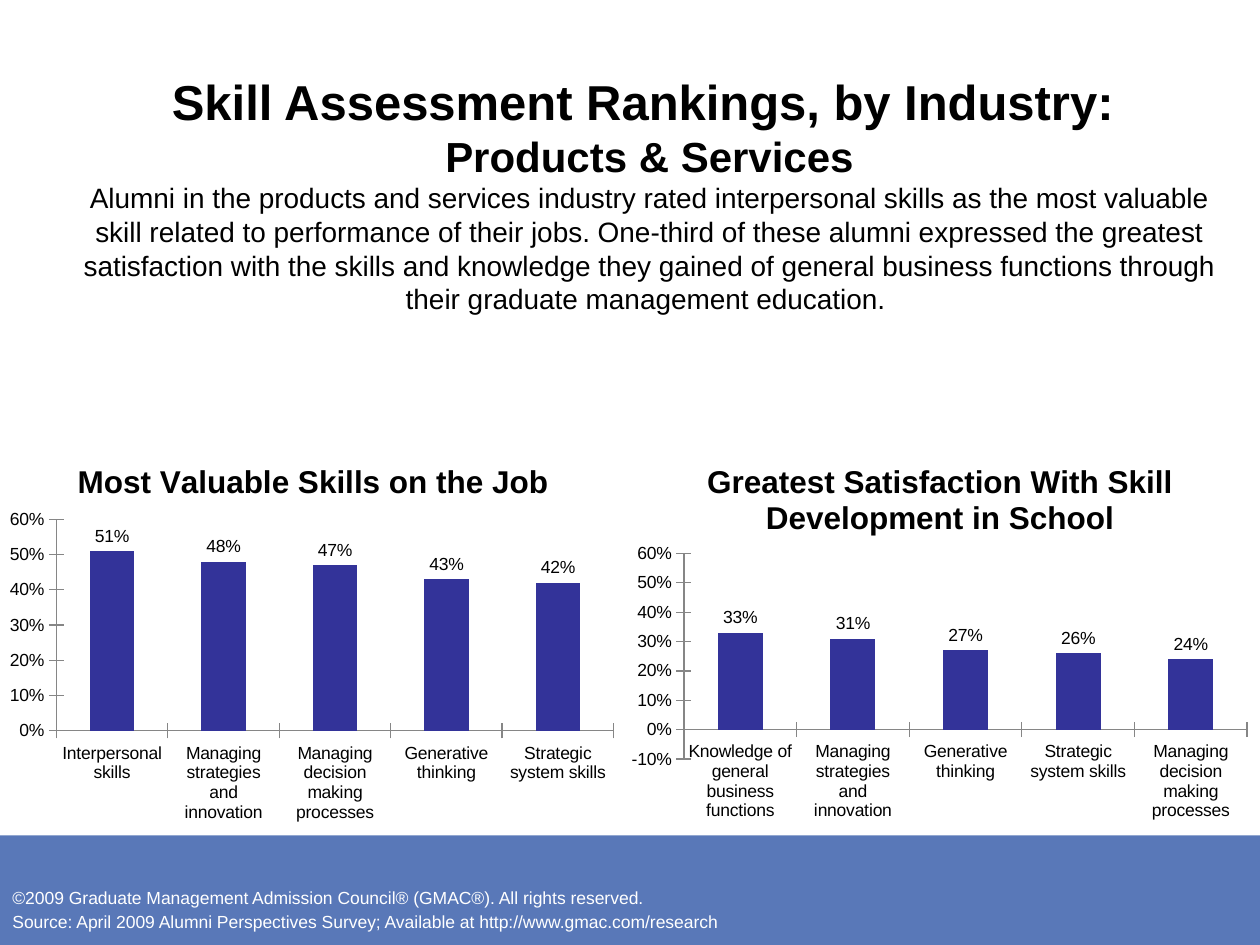
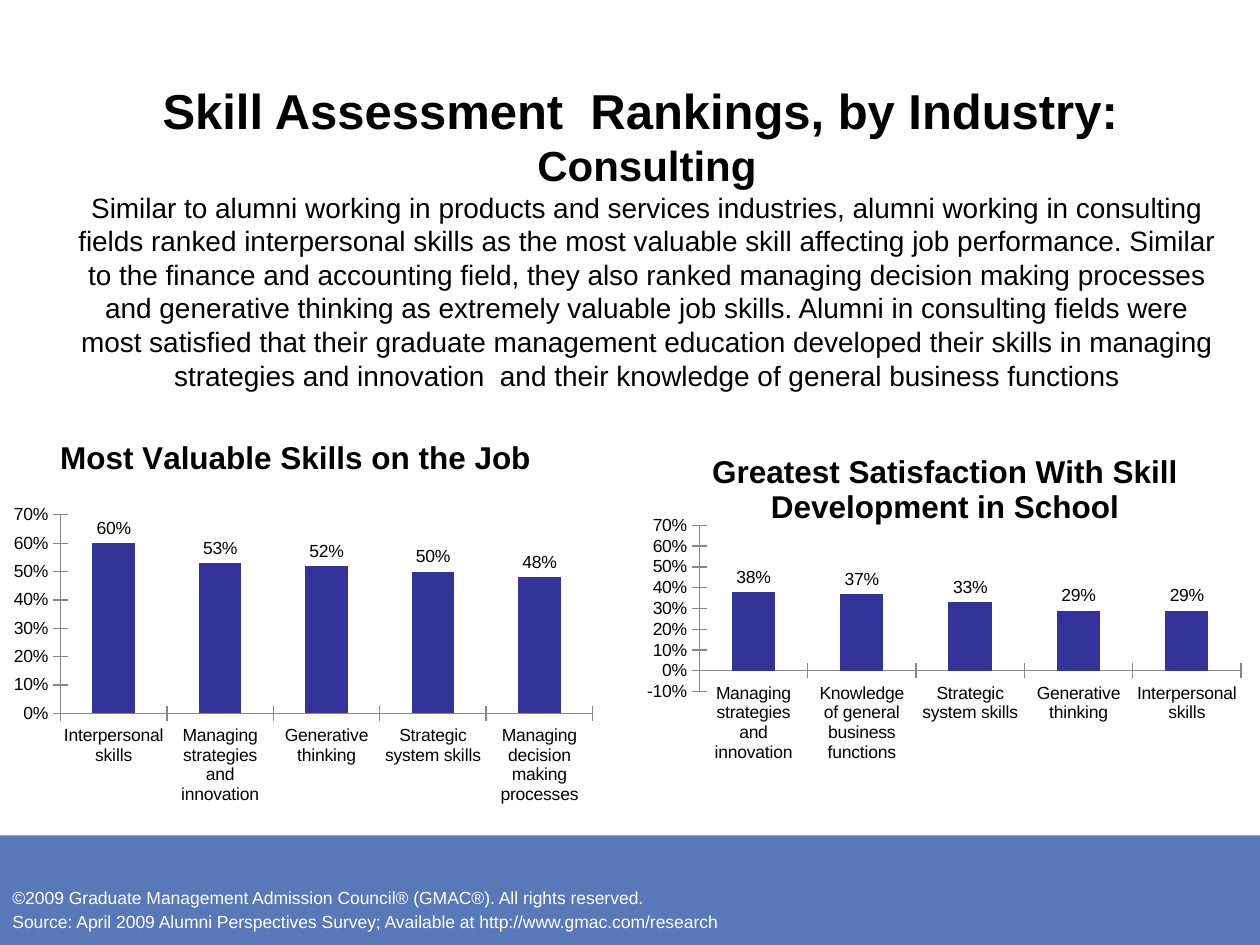
from lxml import etree
from pptx import Presentation, util as u
from pptx.chart.data import CategoryChartData
from pptx.dml.color import RGBColor
from pptx.enum import chart as ch, shapes, text
from pptx.oxml.ns import qn

BLACK = RGBColor(0, 0, 0)
WHITE = RGBColor(255, 255, 255)
BAND = RGBColor(0x59, 0x78, 0xB8)
BAR = RGBColor(0x33, 0x33, 0x99)
AXIS = RGBColor(0x86, 0x86, 0x86)
FONT = "Arial"
WIDTH, HEIGHT = 10, 7.5
BAND_TOP = 6.63
PERCENT = "###0%"

FOOTER = [
    "©2009 Graduate Management Admission Council® (GMAC®). All rights reserved.",
    "Source: April 2009 Alumni Perspectives Survey; Available at http://www.gmac.com/research",
]
JOB = "Most Valuable Skills on the Job"
SCHOOL = "Greatest Satisfaction With Skill Development in School"
INTERPERSONAL = "Interpersonal skills"
STRATEGIES = "Managing strategies and innovation"
DECISIONS = "Managing decision making processes"
THINKING = "Generative thinking"
SYSTEMS = "Strategic system skills"
KNOWLEDGE = "Knowledge of general business functions"

INDUSTRIES = [
    {
        "heading": "Skill Assessment Rankings, by Industry: ",
        "industry": "Products & Services",
        "summary": "Alumni in the products and services industry rated interpersonal skills as the most "
                   "valuable skill related to performance of their jobs. One-third of these alumni expressed "
                   "the greatest satisfaction with the skills and knowledge they gained of general business "
                   "functions through their graduate management education. ",
        "box": (0.52, 0.51, 9.27, 2.05),
        "rankings": [
            {"title": JOB, "box": (0, 3.5, 4.97, 3.11), "plot": (0.09, 0.2, 0.89, 0.54), "range": (0, 0.6),
             "skills": {INTERPERSONAL: 0.51, STRATEGIES: 0.48, DECISIONS: 0.47, THINKING: 0.43, SYSTEMS: 0.42}},
            {"title": SCHOOL, "box": (4.92, 3.5, 5.08, 3.08), "plot": (0.1, 0.29, 0.88, 0.53), "range": (-0.1, 0.6),
             "skills": {KNOWLEDGE: 0.33, STRATEGIES: 0.31, THINKING: 0.27, SYSTEMS: 0.26, DECISIONS: 0.24}},
        ],
    },
    {
        "heading": "Skill Assessment  Rankings, by Industry: ",
        "industry": "Consulting",
        "summary": "Similar to alumni working in products and services industries, alumni working in consulting "
                   "fields ranked interpersonal skills as the most valuable skill affecting job performance. "
                   "Similar to the finance and accounting field, they also ranked managing decision making "
                   "processes and generative thinking as extremely valuable job skills. Alumni in consulting "
                   "fields were most satisfied that their graduate management education developed their skills "
                   "in managing strategies and innovation  and their knowledge of general business functions",
        "box": (0.5, 0.58, 9.27, 2.59),
        "rankings": [
            {"title": JOB, "title_at": (0.09, 0), "box": (0, 3.42, 4.8, 3.03), "plot": (0.1, 0.22, 0.88, 0.52),
             "range": (0, 0.7),
             "skills": {INTERPERSONAL: 0.6, STRATEGIES: 0.53, THINKING: 0.52, SYSTEMS: 0.5, DECISIONS: 0.48}},
            {"title": SCHOOL, "box": (5, 3.42, 5, 3), "plot": (0.11, 0.25, 0.86, 0.44), "range": (-0.1, 0.7),
             "skills": {STRATEGIES: 0.38, KNOWLEDGE: 0.37, SYSTEMS: 0.33, THINKING: 0.29, INTERPERSONAL: 0.29}},
        ],
    },
]


def inches(box):
    return [u.Inches(length) for length in box]


def style(font, size, color=BLACK, bold=False):
    font.name, font.size, font.bold = FONT, u.Pt(size), bold
    font.color.rgb = color


def place(parent, index, shares, inner=False):
    for old in parent.findall(qn("c:layout")):
        parent.remove(old)
    layout = etree.Element(qn("c:layout"))
    manual = etree.SubElement(layout, qn("c:manualLayout"))
    settings = [("layoutTarget", "inner")] if inner else []
    settings += [("xMode", "edge"), ("yMode", "edge"), *zip("xywh", shares)]
    for tag, value in settings:
        etree.SubElement(manual, qn("c:" + tag)).set("val", str(value))
    parent.insert(index, layout)


def add_footer(slide):
    band = slide.shapes.add_shape(shapes.MSO_SHAPE.RECTANGLE,
                                  *inches((0, BAND_TOP, WIDTH, HEIGHT - BAND_TOP)))
    band.shadow.inherit = False
    band.fill.solid()
    band.fill.fore_color.rgb = BAND
    band.line.fill.background()
    frame = slide.shapes.add_textbox(*inches((0, 6.99, 5.88, 0.47))).text_frame
    frame.word_wrap = True
    frame.text = "\n".join(FOOTER)
    for row, line in enumerate(frame.paragraphs):
        style(line.font, 10, WHITE)
        line.space_before = u.Pt(2 * row)


def add_heading(slide, page):
    frame = slide.shapes.add_textbox(*inches(page["box"])).text_frame
    frame.word_wrap = True
    frame.vertical_anchor = text.MSO_ANCHOR.MIDDLE
    parts = [("heading", 28, True), ("industry", 24, True), ("summary", 16, False)]
    frame.text = "\n".join(page[key] for key, _, _ in parts)
    for line, (_, size, bold) in zip(frame.paragraphs, parts):
        line.alignment = text.PP_ALIGN.CENTER
        style(line.font, size, bold=bold)


def add_ranking(slide, ranking):
    data = CategoryChartData(number_format=PERCENT)
    data.categories = list(ranking["skills"])
    data.add_series("Series 1", list(ranking["skills"].values()))
    chart = slide.shapes.add_chart(ch.XL_CHART_TYPE.COLUMN_CLUSTERED, *inches(ranking["box"]), data).chart
    style(chart.font, 10)
    chart.has_legend = False
    chart.has_title = True
    title = chart.chart_title
    title.text_frame.text = ranking["title"]
    style(title.text_frame.paragraphs[0].font, 18, bold=True)
    title.include_in_layout = False
    if "title_at" in ranking:
        place(title._element, 1, ranking["title_at"])
    place(chart._chartSpace.chart.plotArea, 0, ranking["plot"], inner=True)

    for axis in (chart.category_axis, chart.value_axis):
        axis.has_major_gridlines = False
        axis.major_tick_mark = ch.XL_TICK_MARK.CROSS
        axis.minor_tick_mark = ch.XL_TICK_MARK.NONE
        axis.format.line.color.rgb = AXIS
        axis.format.line.width = u.Pt(0.75)
    scale = chart.value_axis
    scale.minimum_scale, scale.maximum_scale = ranking["range"]
    scale.major_unit = 0.1
    scale.tick_labels.number_format = PERCENT
    scale.tick_labels.number_format_is_linked = False

    bars = chart.plots[0]
    bars.vary_by_categories = False
    bars.gap_width = 150
    fill = bars.series[0].format.fill
    fill.solid()
    fill.fore_color.rgb = BAR
    bars.has_data_labels = True
    labels = bars.data_labels
    labels.show_value = True
    labels.number_format = PERCENT
    labels.number_format_is_linked = False
    labels.position = ch.XL_LABEL_POSITION.OUTSIDE_END


def main():
    deck = Presentation()
    deck.slide_width, deck.slide_height = inches((WIDTH, HEIGHT))
    for page in INDUSTRIES:
        slide = deck.slides.add_slide(deck.slide_layouts[6])
        add_footer(slide)
        add_heading(slide, page)
        for ranking in page["rankings"]:
            add_ranking(slide, ranking)
    deck.save("out.pptx")


if __name__ == "__main__":
    main()
